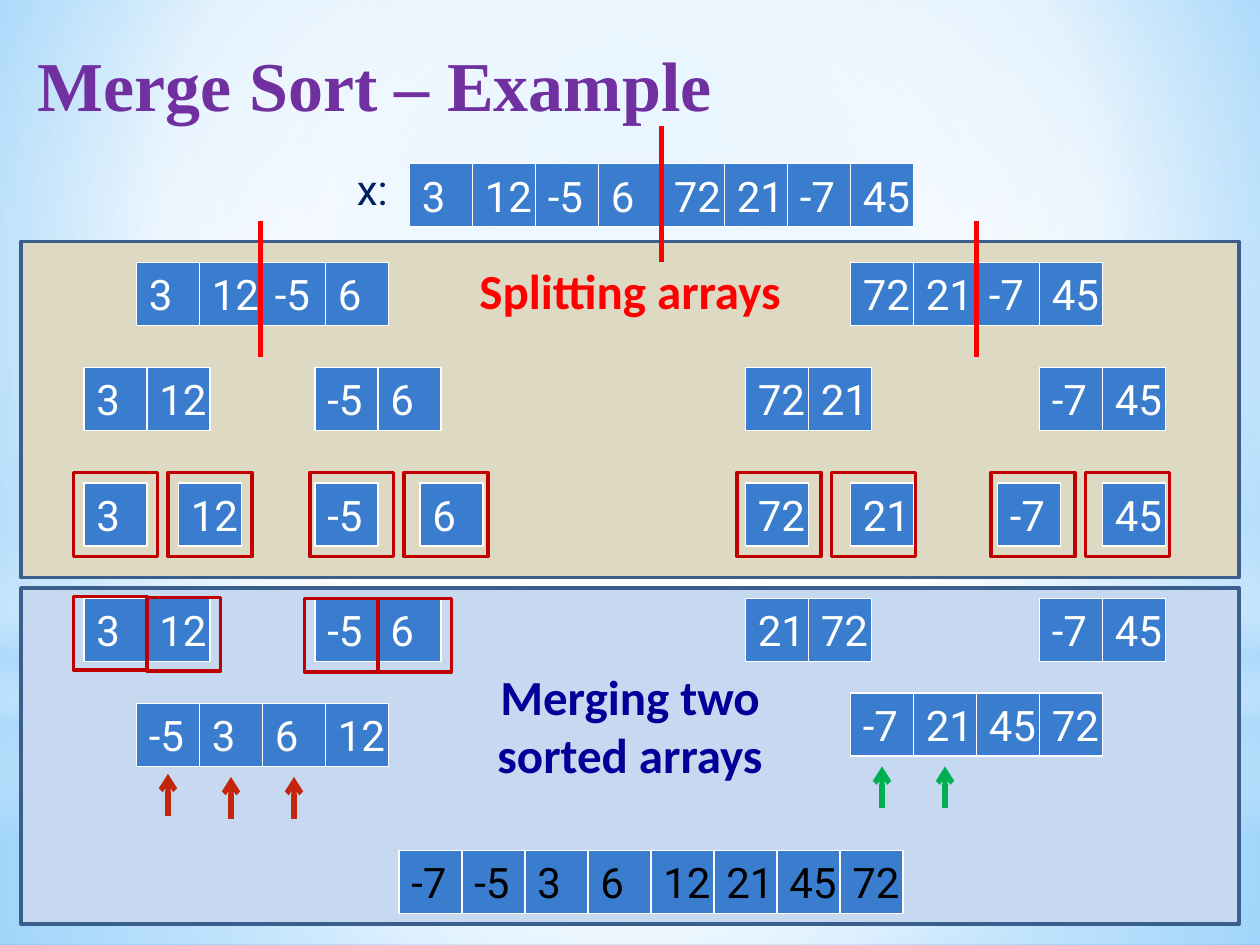
from lxml import etree
from pptx import Presentation
from pptx.dml.color import RGBColor
from pptx.enum.shapes import MSO_CONNECTOR, MSO_SHAPE
from pptx.enum.text import MSO_ANCHOR, PP_ALIGN
from pptx.oxml.ns import qn
from pptx.util import Inches, Pt

RECTANGLE, ELLIPSE = MSO_SHAPE.RECTANGLE, MSO_SHAPE.OVAL
STRAIGHT = MSO_CONNECTOR.STRAIGHT
TOP, MIDDLE = MSO_ANCHOR.TOP, MSO_ANCHOR.MIDDLE
LEFT, CENTER = PP_ALIGN.LEFT, PP_ALIGN.CENTER
CELL = 6  # side of an array cell, in grid units


def grid(units):
    """Length of a number of grid units; the slide has 120 columns, 90 rows."""
    return Inches(units / 12)


def color(value):
    return RGBColor.from_string(value)


class ArraySlide:
    cell_fill, cell_line = "3A7DCE", "FFFFFF"
    panel_line, frame_line = "3A5F8C", "C00000"
    cell_font, label_font, title_font = "Roboto", "Calibri", "Times New Roman"

    def __init__(self, deck):
        self.slide = deck.slides.add_slide(deck.slide_layouts[5])
        self.shapes = self.slide.shapes

    def gradient(self, fill, owner, stops, center=None):
        """Stops are (position, colour, opacity); no centre means top to bottom."""
        fill.gradient()
        gradient = next(owner.iter(qn("a:gradFill")))
        for child in list(gradient):
            gradient.remove(child)
        stop_list = etree.SubElement(gradient, qn("a:gsLst"))
        for position, value, opacity in stops:
            stop = etree.SubElement(stop_list, qn("a:gs"), pos=str(position * 1000))
            shade = etree.SubElement(stop, qn("a:srgbClr"), val=value)
            if opacity < 100:
                etree.SubElement(shade, qn("a:alpha"), val=str(opacity * 1000))
        if center:
            route = etree.SubElement(gradient, qn("a:path"), path="circle")
            sides = {side: str(share * 1000) for side, share in zip("ltrb", center)}
            etree.SubElement(route, qn("a:fillToRect"), **sides)
        else:
            etree.SubElement(gradient, qn("a:lin"), ang="5400000", scaled="0")

    def backdrop(self, stops, center):
        self.gradient(self.slide.background.fill, self.slide.element, stops, center)

    def box(self, area, fill=None, line=None, width=2, kind=RECTANGLE):
        box = self.shapes.add_shape(kind, *map(grid, area))
        box.shadow.inherit = False
        if fill:
            box.fill.solid()
            box.fill.fore_color.rgb = color(fill)
        else:
            box.fill.background()
        if line:
            box.line.color.rgb = color(line)
            box.line.width = Pt(width)
        else:
            box.line.fill.background()
        return box

    def glow(self, area, stops, center=None, kind=RECTANGLE):
        box = self.box(area, kind=kind)
        self.gradient(box.fill, box.element, stops, center)

    def set_text(self, box, lines, font, size, value, bold=False, align=LEFT,
                 anchor=MIDDLE, wrap=False):
        frame = box.text_frame
        frame.text = "\n".join(lines)
        frame.word_wrap = wrap
        frame.vertical_anchor = anchor
        for para in frame.paragraphs:
            para.alignment = align
            para.font.name, para.font.size = font, Pt(size)
            para.font.bold, para.font.color.rgb = bold, color(value)

    def title(self, text):
        title = self.shapes.title
        title.left, title.top = Inches(0.2), Inches(0.21)
        title.width, title.height = Inches(9.53), Inches(1.02)
        title.text_frame.margin_top = Inches(0.12)
        self.set_text(title, [text], self.title_font, 40, "7030A0", True,
                      anchor=TOP, wrap=True)
        title.element.getparent().append(title.element)  # in front of the glows

    def panel(self, row, fill, lines, value, inset):
        box = self.box((2, row, 116, 32), fill, self.panel_line)
        box.text_frame.margin_top = Inches(inset)
        self.set_text(box, lines, self.label_font, 28, value, True, CENTER, TOP, True)

    def array(self, column, row, values, value="FFFFFF"):
        for index, number in enumerate(values):
            box = self.box((column + index * CELL, row, CELL, CELL),
                           self.cell_fill, self.cell_line, 0.75)
            self.set_text(box, [str(number)], self.cell_font, 24, value)

    def label(self, area, text, value):
        box = self.shapes.add_textbox(*map(grid, area))
        self.set_text(box, [text], self.cell_font, 24, value, anchor=TOP)

    def frame(self, column, row, side):
        self.box((column, row, side, side), line=self.frame_line)

    def line(self, column, start, end, value, arrow=False):
        line = self.shapes.add_connector(
            STRAIGHT, grid(column), grid(start), grid(column), grid(end))
        line.line.color.rgb = color(value)
        line.line.width = Pt(3)
        properties = line.element.find(qn("p:spPr"))
        if arrow:
            outline = properties.find(qn("a:ln"))
            etree.SubElement(outline, qn("a:tailEnd"), type="arrow")
        etree.SubElement(properties, qn("a:effectLst"))


def main():
    deck = Presentation()
    deck.slide_width, deck.slide_height = grid(120), grid(90)
    page = ArraySlide(deck)

    # Sky background
    white, sky, middle = "FFFFFF", "B4DCFA", (50, 50, 50, 50)
    page.backdrop([(0, "9ED5FF", 100), (60, white, 100), (100, "5BB9FF", 100)],
                  (20, 10, 20, 60))
    page.glow((0, 67, 120, 23),
              [(0, white, 91), (37, white, 76), (100, sky, 79)], middle)
    page.glow((0, 0, 120, 67),
              [(0, white, 89), (48, white, 62), (100, sky, 79)], middle)
    page.glow((0, 49.4, 120, 30),
              [(0, white, 0), (29, white, 30), (45, sky, 40),
               (55, white, 26), (65, sky, 60), (100, white, 0)])
    page.glow((0, 21, 120, 67), [(0, white, 100), (56, white, 0)], middle, ELLIPSE)

    # Title and the two phases
    page.title("Merge Sort – Example")
    page.panel(56, "C6D9F1", ["Merging two", "sorted arrays"], "000099", 0.62)
    page.panel(23, "DDD9C3", ["Splitting arrays"], "FF0000", 0.15)

    # Input array, then halves and pairs
    numbers = [3, 12, -5, 6, 72, 21, -7, 45]
    page.array(39, 15.6, numbers)
    page.label((32.8, 15, 5.8, 6), "x:", "002060")
    for column, start in ((13, 0), (81, 4)):
        page.array(column, 25, numbers[start:start + 4])
    pair_columns = (8, 30, 71, 99)
    for index, column in enumerate(pair_columns):
        page.array(column, 35, numbers[index * 2:index * 2 + 2])

    # Single elements, framed two by two
    for column, number in zip((8, 17, 30, 40, 71, 81, 95, 105), numbers):
        page.array(column, 46, [number])
    for column in (7, 29.5, 70.2, 94.4):
        for offset in (0, 9):
            page.frame(column + offset, 45, 8)

    # Sorted pairs and quarters
    for column, pair in zip(pair_columns, ((3, 12), (-5, 6), (21, 72), (-7, 45))):
        page.array(column, 57, pair)
    for column, row in ((7, 56.8), (14, 56.9), (29, 57), (36, 57)):
        page.frame(column, row, 7)
    page.array(13, 67, (-5, 3, 6, 12))
    page.array(81, 66, (-7, 21, 45, 72))

    # Split lines and merge pointers
    for column, start in ((63, 12), (24.8, 21), (93, 21)):
        page.line(column, start, start + 13, "FF0000")
    for column, start, value in ((16, 77.7, "C3260C"), (22, 78, "C3260C"),
                                 (28, 78, "C3260C"), (84, 77, "00B050"),
                                 (90, 77, "00B050")):
        page.line(column, start, start - 4, value, arrow=True)

    # Sorted result
    page.array(38, 81, sorted(numbers), "000000")

    deck.save("out.pptx")


if __name__ == "__main__":
    main()
